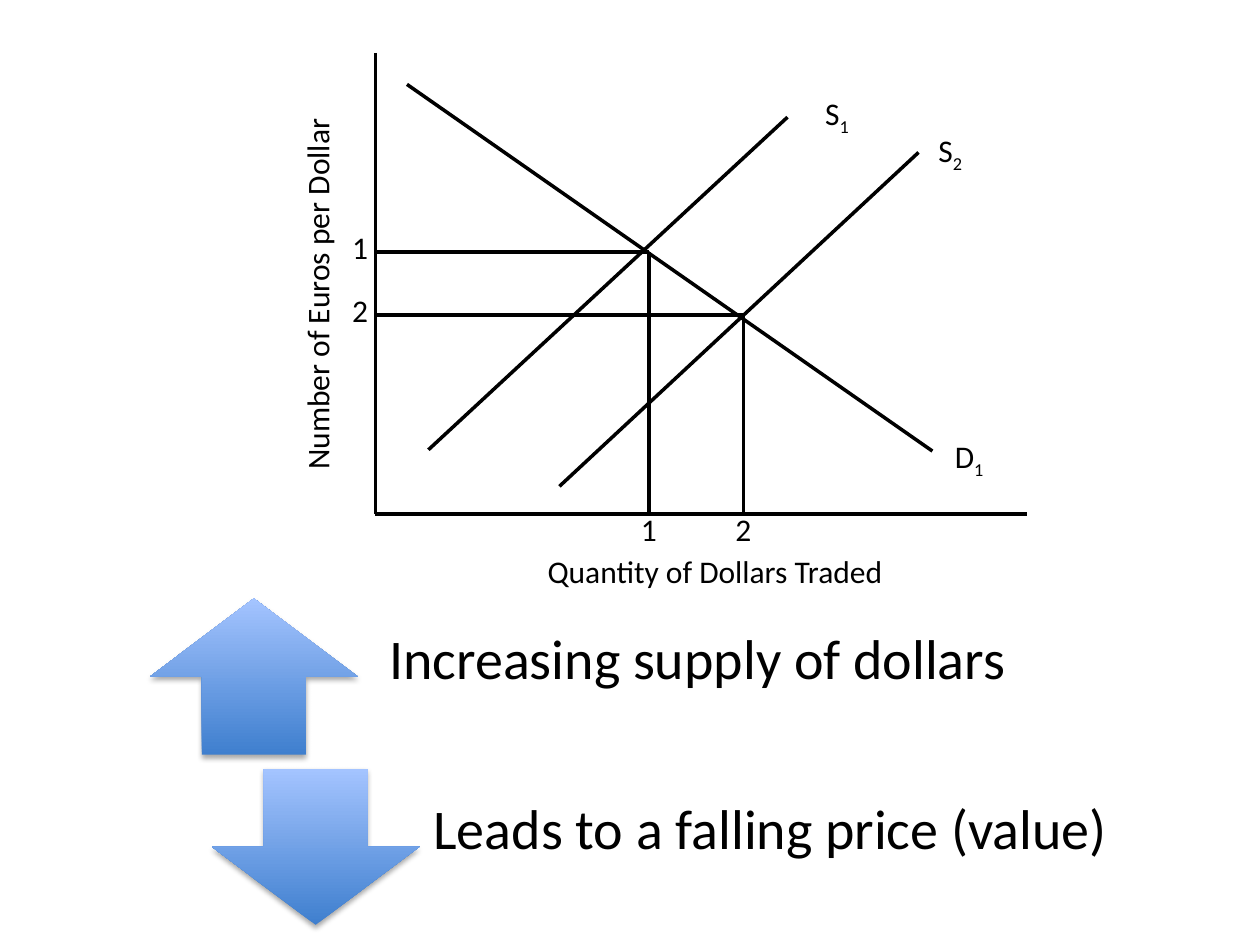
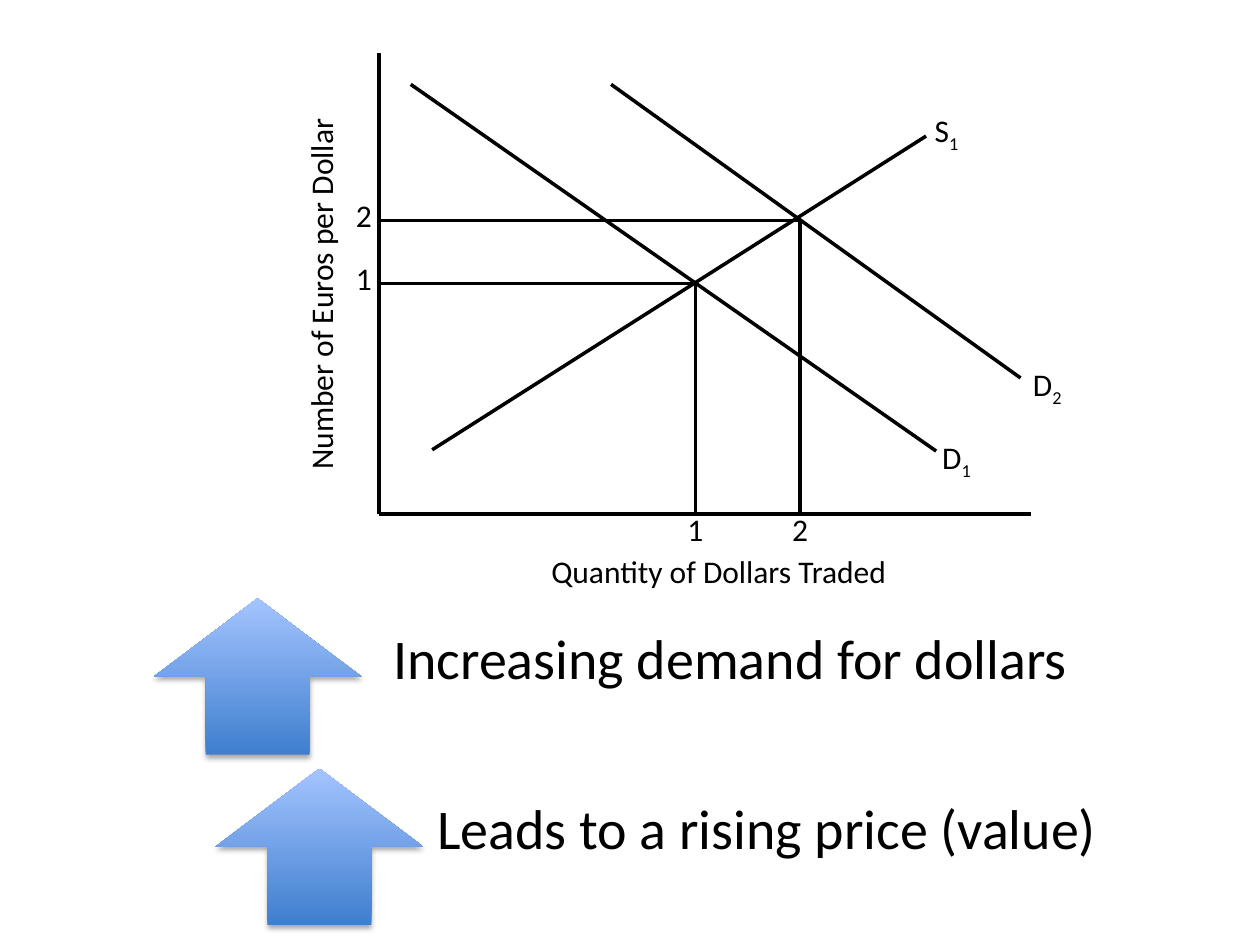
from collections import namedtuple
from dataclasses import dataclass

from lxml.etree import SubElement
from pptx import Presentation
from pptx.dml.color import RGBColor
from pptx.enum.shapes import MSO_CONNECTOR, MSO_SHAPE
from pptx.enum.text import MSO_ANCHOR, MSO_AUTO_SIZE, PP_ALIGN
from pptx.oxml.ns import qn
from pptx.util import Emu, Inches, Pt

Box = namedtuple("Box", "left top width height")
Curve = namedtuple("Curve", "name index start end label")
Message = namedtuple("Message", "arrow text")


@dataclass(frozen=True)
class Theme:
    """Colours, font and sizes shared by the slides."""

    ink: RGBColor = RGBColor(0, 0, 0)
    arrow_bottom: RGBColor = RGBColor(0x3F, 0x7F, 0xCE)
    arrow_top: RGBColor = RGBColor(0xA4, 0xC4, 0xFF)
    font: str = "Calibri"
    label_size: Pt = Pt(18)
    message_size: Pt = Pt(32)
    line_width: Pt = Pt(2)


THEME = Theme()
LABEL_HEIGHT = 0.4
ARROW_WIDTH, ARROW_HEIGHT = 1.65, 1.24
MESSAGE_PITCH = 1.35
MESSAGE_LAYOUT = [(0, 1.65, 5.88), (0.49, 2.0, 6.02)]

SLIDES = [
    {
        "left": 2.98,
        "curves": [
            Curve("D", "1", (0.25, 0.25), (4.42, 3.16), (4.5, 3.0)),
            Curve("S", "1", (0.42, 3.15), (3.27, 0.51), (3.47, 0.28)),
            Curve("S", "2", (1.46, 3.44), (4.31, 0.79), (4.37, 0.57)),
        ],
        "equilibria": [(2.17, 1.58), (2.92, 2.08)],
        "messages": [
            Message(MSO_SHAPE.UP_ARROW, "Increasing supply of dollars"),
            Message(MSO_SHAPE.DOWN_ARROW, "Leads to a falling price (value)"),
        ],
    },
    {
        "left": 3.01,
        "curves": [
            Curve("D", "1", (0.25, 0.25), (4.42, 3.16), (4.37, 3.01)),
            Curve("S", "1", (0.42, 3.15), (4.34, 0.66), (4.31, 0.41)),
            Curve("D", "2", (1.84, 0.25), (5.09, 2.58), (5.09, 2.43)),
        ],
        "equilibria": [(2.51, 1.83), (3.34, 1.33)],
        "messages": [
            Message(MSO_SHAPE.UP_ARROW, "Increasing demand for dollars"),
            Message(MSO_SHAPE.UP_ARROW, "Leads to a rising price (value)"),
        ],
    },
]


def add_text(slide, box, text, size, alignment=PP_ALIGN.LEFT, subscript=""):
    """Add a wrapped text box with an optional subscript run."""
    shape = slide.shapes.add_textbox(*map(Inches, box))
    shape.text_frame.word_wrap = True
    paragraph = shape.text_frame.paragraphs[0]
    paragraph.alignment = alignment
    for content, baseline in ((text, None), (subscript, "-25000")):
        if not content:
            continue
        run = paragraph.add_run()
        run.text = content
        run.font.name = THEME.font
        run.font.size = size
        run.font.color.rgb = THEME.ink
        if baseline:
            run.font._element.set("baseline", baseline)
    return shape


def add_label(slide, box, text, alignment=PP_ALIGN.LEFT, subscript=""):
    """Add a graph label whose box grows with its text."""
    shape = add_text(slide, box, text, THEME.label_size, alignment, subscript)
    shape.text_frame.auto_size = MSO_AUTO_SIZE.SHAPE_TO_FIT_TEXT
    return shape


def add_line(slide, box, start, end):
    """Draw a line between two points measured from the box corner."""
    ends = [Inches(origin + offset) for point in (start, end)
            for origin, offset in zip(box[:2], point)]
    connector = slide.shapes.add_connector(MSO_CONNECTOR.STRAIGHT, *ends)
    connector.line.color.rgb = THEME.ink
    connector.line.width = THEME.line_width
    SubElement(connector._element.spPr, qn("a:effectLst"))


def add_axes(slide, box):
    """Draw both axes with their titles."""
    add_line(slide, box, (0, 0), (0, box.height))
    add_line(slide, box, (0, box.height), (box.width, box.height))
    price_title = add_label(
        slide, Box(box.left - 2.04, box.top + 1.71, 3.16, 0.41),
        "Number of Euros per Dollar", PP_ALIGN.CENTER)
    price_title.rotation = 270
    add_label(slide, Box(box.left + 0.81, box.top + box.height + 0.25, 3.77, 0.34),
              "Quantity of Dollars Traded", PP_ALIGN.CENTER)


def add_equilibrium(slide, box, point, number):
    """Draw the guides of an equilibrium and number them on both axes."""
    quantity, price = point
    add_line(slide, box, point, (0, price))
    add_line(slide, box, point, (quantity, box.height))
    add_label(slide, Box(box.left - 0.34, box.top + price - 0.24, 0.38, LABEL_HEIGHT),
              number, PP_ALIGN.RIGHT)
    add_label(slide, Box(box.left + quantity - 0.2, box.top + box.height - 0.08,
                         0.4, LABEL_HEIGHT), number, PP_ALIGN.CENTER)


def add_graph(slide, box, curves, equilibria):
    """Draw the market graph in the box spanned by its axes."""
    add_axes(slide, box)
    for curve in curves:
        add_line(slide, box, curve.start, curve.end)
        left, top = curve.label
        add_label(slide, Box(box.left + left, box.top + top, 0.5, LABEL_HEIGHT),
                  curve.name, subscript=curve.index)
    for number, point in enumerate(equilibria, start=1):
        add_equilibrium(slide, box, point, str(number))


def add_arrow(slide, box, kind):
    """Add a block arrow with a vertical gradient and a soft shadow."""
    shape = slide.shapes.add_shape(kind, *map(Inches, box))
    shape.fill.gradient()
    shape.fill.gradient_angle = 90
    colours = (THEME.arrow_bottom, THEME.arrow_top)
    for stop, position, colour in zip(shape.fill.gradient_stops, (0, 1), colours):
        stop.position = position
        stop.color.rgb = colour
    shape.line.fill.background()
    shape.shadow.inherit = False
    effects = shape._element.spPr.find(qn("a:effectLst"))
    shadow = SubElement(effects, qn("a:outerShdw"), blurRad=str(Pt(3.1)),
                        dist=str(Pt(1.8)), dir="5400000", rotWithShape="0")
    colour = SubElement(shadow, qn("a:srgbClr"), val=str(THEME.ink))
    SubElement(colour, qn("a:alpha"), val="35000")


def add_messages(slide, box, messages):
    """Stack the arrows with their statements inside the box."""
    for row, (message, layout) in enumerate(zip(messages, MESSAGE_LAYOUT)):
        arrow_left, text_left, text_width = layout
        top = box.top + row * MESSAGE_PITCH
        add_arrow(slide, Box(box.left + arrow_left, top, ARROW_WIDTH, ARROW_HEIGHT),
                  message.arrow)
        shape = add_text(slide, Box(box.left + text_left, top, text_width, ARROW_HEIGHT),
                         message.text, THEME.message_size)
        frame = shape.text_frame
        frame.vertical_anchor = MSO_ANCHOR.MIDDLE
        frame.margin_left = frame.margin_right = frame.margin_bottom = Inches(0.25)
        frame.margin_top = Emu(0)
        frame.paragraphs[0].line_spacing = 0.9


def add_market_slide(presentation, left, curves, equilibria, messages):
    """Add a slide with a graph above its two messages."""
    slide = presentation.slides.add_slide(presentation.slide_layouts[6])
    add_graph(slide, Box(left, 0.42, 5.17, 3.66), curves, equilibria)
    add_messages(slide, Box(left - 1.79, 4.75, 8.02, 2.59), messages)


def main():
    """Build and save the presentation."""
    presentation = Presentation()
    presentation.slide_width = Inches(10)
    presentation.slide_height = Inches(7.5)
    for content in SLIDES:
        add_market_slide(presentation, **content)
    presentation.save("out.pptx")


if __name__ == "__main__":
    main()
